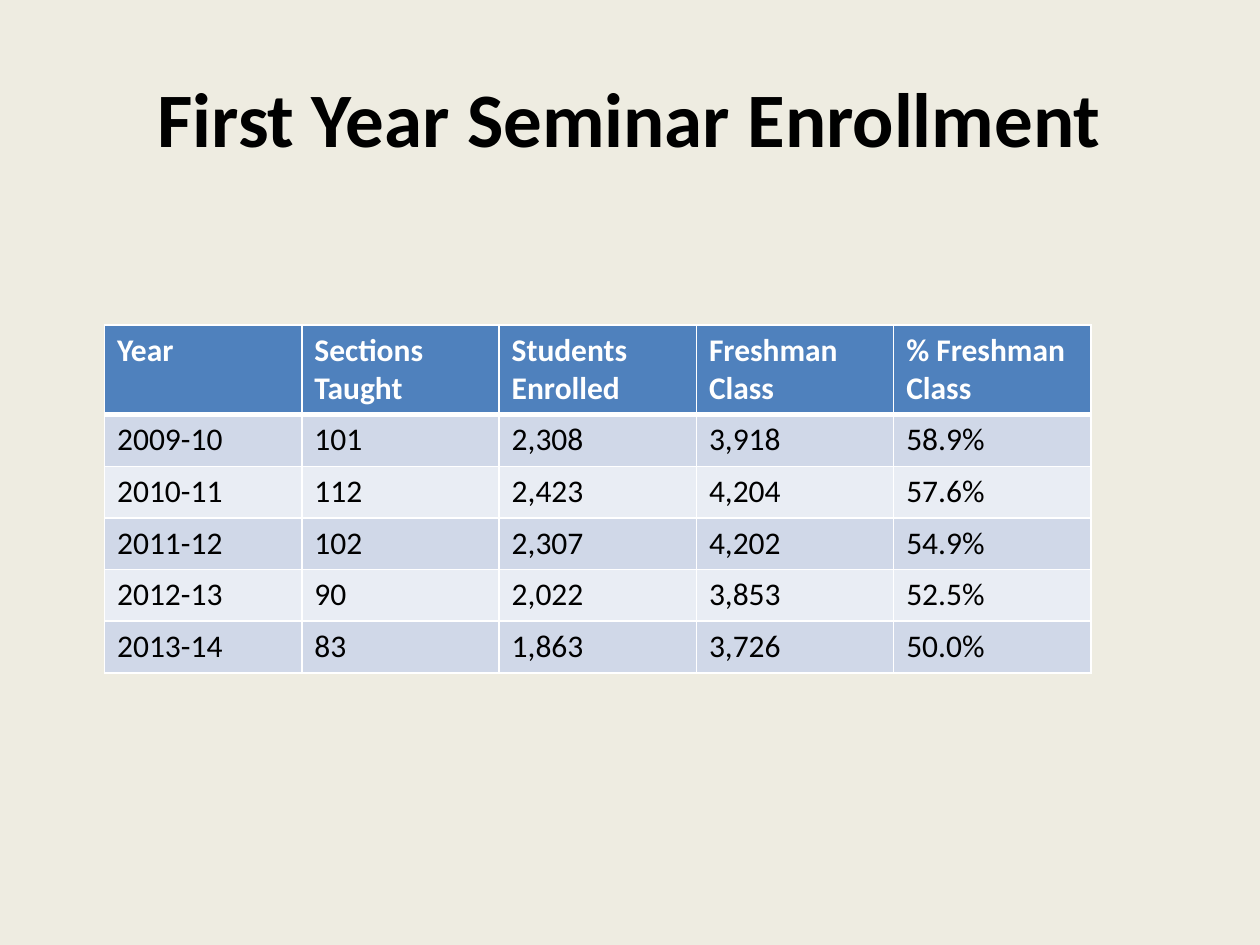
from lxml.etree import SubElement
from pptx import Presentation
from pptx.dml.color import RGBColor
from pptx.enum.text import MSO_ANCHOR, PP_ALIGN
from pptx.oxml.ns import qn
from pptx.util import Inches, Pt

COLORS = {
    "background": "EEECE1",
    "text": "000000",
    "white": "FFFFFF",
    "header": "4F81BD",
    "odd": "D0D8E8",
    "even": "E9EDF4",
}
ROWS = [
    ("Year", "Sections Taught", "Students Enrolled", "Freshman Class", "% Freshman Class"),
    ("2009-10", "101", "2,308", "3,918", "58.9%"),
    ("2010-11", "112", "2,423", "4,204", "57.6%"),
    ("2011-12", "102", "2,307", "4,202", "54.9%"),
    ("2012-13", "90", "2,022", "3,853", "52.5%"),
    ("2013-14", "83", "1,863", "3,726", "50.0%"),
]


def write_text(tf, text, size=18, color="text", bold=False, align=PP_ALIGN.LEFT):
    p = tf.paragraphs[0]
    p.alignment = align
    r = p.add_run()
    r.text = text
    r.font.name = "Calibri"
    r.font.size = Pt(size)
    r.font.bold = bold
    r.font.color.rgb = RGBColor.from_string(COLORS[color])


def add_borders(cell, top=1, bottom=1):
    """Draw white cell borders; call before setting the fill, which must follow them."""
    tcPr = cell._tc.get_or_add_tcPr()
    for tag, width in (("a:lnL", 1), ("a:lnR", 1), ("a:lnT", top), ("a:lnB", bottom)):
        ln = SubElement(tcPr, qn(tag), w=str(Pt(width)))
        fill = SubElement(ln, qn("a:solidFill"))
        SubElement(fill, qn("a:srgbClr"), val=COLORS["white"])


prs = Presentation()
prs.slide_width, prs.slide_height = Inches(10), Inches(7.5)
s = prs.slides.add_slide(prs.slide_layouts[5])
s.background.fill.solid()
s.background.fill.fore_color.rgb = RGBColor.from_string(COLORS["background"])

title = s.shapes.title
title.left, title.top = Inches(0.5), Inches(0.3)
title.width, title.height = Inches(9), Inches(1.25)
title.text_frame.vertical_anchor = MSO_ANCHOR.MIDDLE
write_text(title.text_frame, "First Year Seminar Enrollment",
           size=44, bold=True, align=PP_ALIGN.CENTER)

table = s.shapes.add_table(len(ROWS), len(ROWS[0]), Inches(0.83), Inches(2.58),
                           Inches(7.83), Inches(2.73)).table
for i, values in enumerate(ROWS):
    is_header = i == 0
    table.rows[i].height = Inches(0.7 if is_header else 0.41)
    band = "header" if is_header else "odd" if i % 2 else "even"
    for j, value in enumerate(values):
        cell = table.cell(i, j)
        add_borders(cell, top=3 if i == 1 else 1, bottom=3 if is_header else 1)
        cell.fill.solid()
        cell.fill.fore_color.rgb = RGBColor.from_string(COLORS[band])
        write_text(cell.text_frame, value, bold=is_header,
                   color="white" if is_header else "text")

prs.save("out.pptx")
